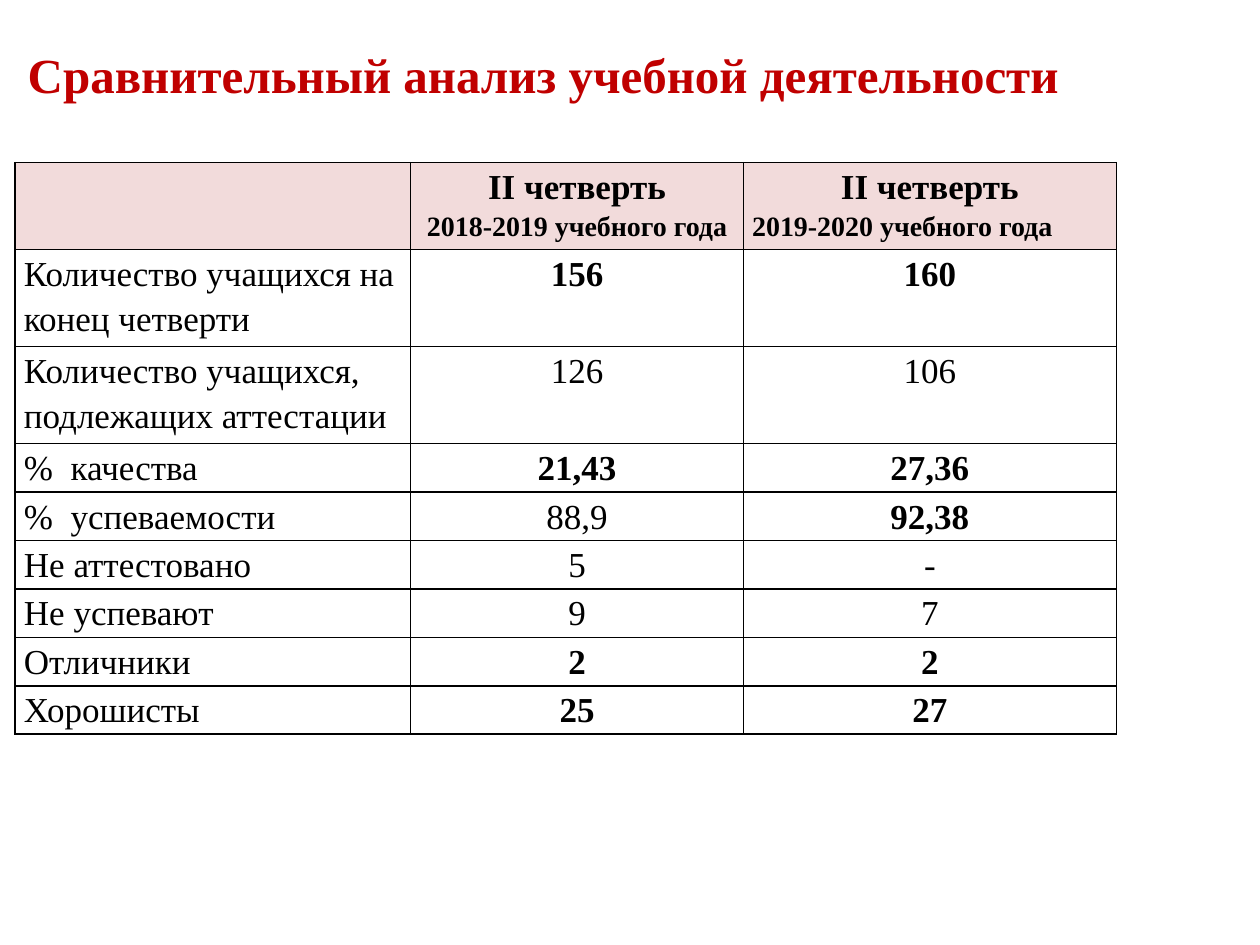
import pptx
import pptx.dml.color
import pptx.enum.text
import pptx.oxml.ns
import pptx.util
from lxml import etree

Inches, Pt = pptx.util.Inches, pptx.util.Pt
Color = pptx.dml.color.RGBColor.from_string
Align, Anchor = pptx.enum.text.PP_ALIGN, pptx.enum.text.MSO_ANCHOR
qn = pptx.oxml.ns.qn

THEME = {
    "font": "Times New Roman",
    "title_color": "C00000", "text_color": "000000",
    "header_fill": "F2DBDB", "border": "000000",
    "title_size": 28, "body_size": 20, "year_size": 16,
}
LEFT = 0.12
COLUMNS = [3.14, 2.64, 2.96]
HEADER_HEIGHT, LINE_HEIGHT = 0.69, 0.385

HEADERS = ["2018-2019 учебного года", "2019-2020 учебного года"]
# Label lines, the two values, and whether each value is bold
ROWS = [
    (["Количество учащихся на конец четверти"], ("156", "160"), (True, True)),
    (["Количество учащихся,", "подлежащих аттестации"], ("126", "106"), (False, False)),
    (["%  качества"], ("21,43", "27,36"), (True, True)),
    (["%  успеваемости"], ("88,9", "92,38"), (False, True)),
    (["Не аттестовано"], ("5", "-"), (False, False)),
    (["Не успевают"], ("9", "7"), (False, False)),
    (["Отличники"], ("2", "2"), (True, True)),
    (["Хорошисты"], ("25", "27"), (True, True)),
]
TALL_ROWS = (1, 2)


def write(para, text, size=THEME["body_size"], bold=False,
          color=THEME["text_color"], align=Align.LEFT, spacing=1.15):
    para.alignment = align
    para.line_spacing = spacing
    span = para.add_run()
    span.text = text
    span.font.name = THEME["font"]
    span.font.size = Pt(size)
    span.font.bold = bold
    span.font.color.rgb = Color(color)


def style_cell(cell, fill=None):
    """Set the insets, the four borders and the fill of a table cell."""
    cell.margin_left = cell.margin_right = Inches(0.07)
    cell.margin_top = cell.margin_bottom = 0
    properties = cell._tc.get_or_add_tcPr()
    for side in ("a:lnL", "a:lnR", "a:lnT", "a:lnB"):
        line = etree.SubElement(properties, qn(side), w=str(Pt(1)))
        solid = etree.SubElement(line, qn("a:solidFill"))
        etree.SubElement(solid, qn("a:srgbClr"), val=THEME["border"])
    if fill:
        cell.fill.solid()
        cell.fill.fore_color.rgb = Color(fill)
    else:
        cell.fill.background()


deck = pptx.Presentation()
deck.slide_width, deck.slide_height = Inches(10), Inches(7.5)
page = deck.slides.add_slide(deck.slide_layouts[5])

title = page.shapes.title
title.left, title.top = Inches(LEFT), Inches(0.25)
title.width, title.height = Inches(8.57), Inches(1.04)
frame = title.text_frame
frame.word_wrap = False
frame.auto_size = pptx.enum.text.MSO_AUTO_SIZE.NONE
frame.vertical_anchor = Anchor.TOP
frame.margin_top = Inches(0.1)
write(frame.paragraphs[0], "Сравнительный анализ учебной деятельности",
      size=THEME["title_size"], bold=True, color=THEME["title_color"], spacing=1.0)

heights = [HEADER_HEIGHT] + [
    LINE_HEIGHT * (2 if number in TALL_ROWS else 1)
    for number in range(1, len(ROWS) + 1)]
table = page.shapes.add_table(
    len(heights), len(COLUMNS), Inches(LEFT), Inches(1.29),
    Inches(sum(COLUMNS)), Inches(sum(heights))).table
table.horz_banding = False
for column, width in zip(table.columns, COLUMNS):
    column.width = Inches(width)
for row, height in zip(table.rows, heights):
    row.height = Inches(height)
for number, row in enumerate(table.rows):
    for cell in row.cells:
        style_cell(cell, fill=THEME["header_fill"] if number == 0 else None)

for column, (years, align) in enumerate(zip(HEADERS, (Align.CENTER, Align.LEFT)), 1):
    frame = table.cell(0, column).text_frame
    write(frame.paragraphs[0], "II четверть", bold=True, align=Align.CENTER)
    write(frame.add_paragraph(), years, size=THEME["year_size"], bold=True, align=align)

for number, (label, values, bolds) in enumerate(ROWS, 1):
    frame = table.cell(number, 0).text_frame
    write(frame.paragraphs[0], label[0])
    for text in label[1:]:
        write(frame.add_paragraph(), text)
    for column, (value, bold) in enumerate(zip(values, bolds), 1):
        write(table.cell(number, column).text_frame.paragraphs[0], value,
              bold=bold, align=Align.CENTER)

deck.save("out.pptx")
